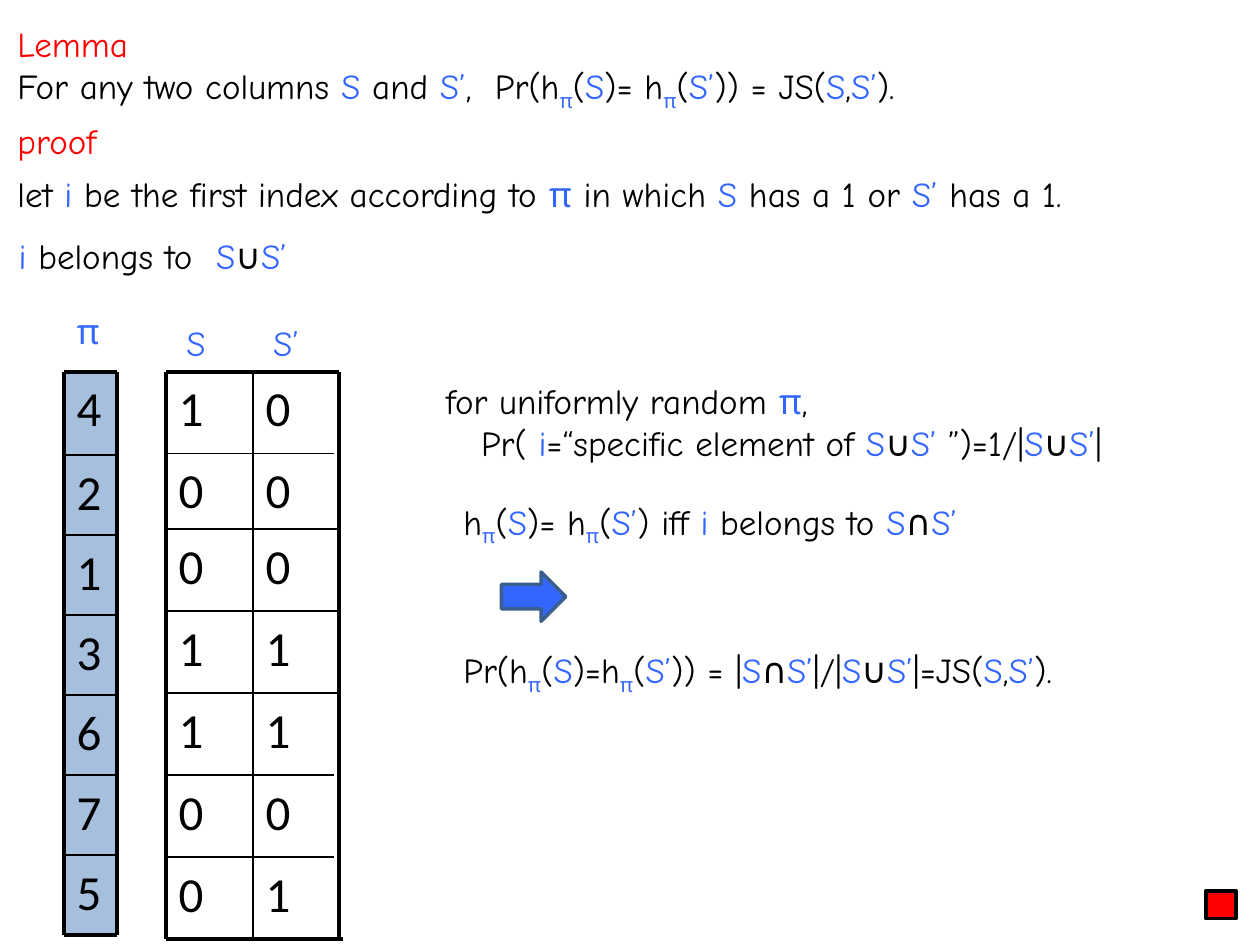
from dataclasses import dataclass

from lxml.etree import SubElement
from pptx import Presentation
from pptx.dml.color import RGBColor
from pptx.enum.shapes import MSO_CONNECTOR as LINE, MSO_SHAPE as SHAPE
from pptx.enum.text import MSO_ANCHOR as ANCHOR, MSO_AUTO_SIZE as FIT, PP_ALIGN as ALIGN
from pptx.oxml.ns import qn
from pptx.slide import Slide
from pptx.util import Inches, Pt

BLUE, RED, BLACK = "3366FF", "FF0000", "000000"


def color(value):
    return RGBColor.from_string(value)


@dataclass
class Painter:
    """Draws styled elements on the current page; *x* marks blue and *_x* a blue subscript."""

    page: Slide
    font: str = "Comic Neue"
    digit_font: str = "Calibri"
    size: int = 20
    digit_size: int = 28
    thin: float = 1
    thick: float = 2.25

    def span(self, para, text, tint, font, size):
        span = para.add_run()
        span.text = text.removeprefix("_")
        for name, value in {"name": font, "size": Pt(size)}.items():
            setattr(span.font, name, value)
        span.font.color.rgb = color(tint)
        if text.startswith("_"):
            span._r.get_or_add_rPr().set("baseline", "-25000")

    def fill_frame(self, frame, lines, tints, font, size):
        style = {"word_wrap": True, "vertical_anchor": ANCHOR.TOP}
        for name, value in style.items():
            setattr(frame, name, value)
        for index, (line, tint) in enumerate(zip(lines, tints)):
            para = frame.add_paragraph() if index else frame.paragraphs[0]
            para.alignment = ALIGN.LEFT
            for order, text in enumerate(line.split("*")):
                if text:
                    self.span(para, text, BLUE if order % 2 else tint, font, size)

    def text(self, left, top, width, height, lines, tints=(BLACK, BLACK)):
        box = self.page.shapes.add_textbox(*map(Inches, (left, top, width, height)))
        self.fill_frame(box.text_frame, lines, tints, self.font, self.size)
        box.text_frame.auto_size = FIT.SHAPE_TO_FIT_TEXT
        return box

    def shape(self, kind, left, top, width, height, fill, line=None, alpha=None):
        shape = self.page.shapes.add_shape(kind, *map(Inches, (left, top, width, height)))
        shape.shadow.inherit = False
        shape.fill.solid()
        shape.fill.fore_color.rgb = color(fill)
        if alpha:
            tint = shape._element.spPr.find(qn("a:solidFill"))[0]
            SubElement(tint, qn("a:alpha"), val=str(alpha * 1000))
        if line:
            shape.line.color.rgb = color(line)
            shape.line.width = Pt(2)
        else:
            shape.line.fill.background()
        return shape

    def cell(self, left, top, width, height, digit, fill=None):
        if fill:
            box = self.shape(SHAPE.RECTANGLE, left, top, width, height, fill, alpha=50)
        else:
            box = self.page.shapes.add_textbox(*map(Inches, (left, top, width, height)))
        self.fill_frame(box.text_frame, [digit], [BLACK], self.digit_font, self.digit_size)

    def line(self, x1, y1, x2, y2, width):
        line = self.page.shapes.add_connector(LINE.STRAIGHT, *map(Inches, (x1, y1, x2, y2)))
        line.line.color.rgb = color(BLACK)
        line.line.width = Pt(width)
        SubElement(line._element.spPr, qn("a:effectLst"))

    def grid(self, xs, ys, columns, fill=None, ends=None):
        for left, right, digits in zip(xs, xs[1:], columns):
            for top, bottom, digit in zip(ys, ys[1:], digits):
                self.cell(left, top, right - left, bottom - top, digit, fill)
        for row, y in enumerate(ys):
            end = (ends or {}).get(row, xs[-1])
            self.line(xs[0], y, end, y, self.thick if y in (ys[0], ys[-1]) else self.thin)
        for x in xs:
            self.line(x, ys[0], x, ys[-1], self.thick if x in (xs[0], xs[-1]) else self.thin)


def main():
    deck = Presentation()
    deck.slide_width, deck.slide_height = Inches(10), Inches(7.5)
    painter = Painter(deck.slides.add_slide(deck.slide_layouts[6]))

    painter.text(0.04, 0.13, 9.61, 0.77, [
        "Lemma",
        "For any two columns *S* and* S’*,  Pr(h*_π*(*S*)= h*_π*(*S’*)) = JS(*S*,*S’*).",
    ], (RED, BLACK))
    painter.text(0.04, 0.9, 9.93, 0.44, ["proof"], (RED,))
    painter.text(0.04, 1.32, 9.61, 0.44, [
        "let *i* be the first index according to *π* in which *S* has a 1 or *S’ *has a 1.",
    ])
    painter.text(0.05, 1.81, 2.97, 0.44, ["*i* belongs to  *S*∪*S’*"])
    claim = painter.text(3.44, 2.96, 6.38, 1.11, [
        "for uniformly random *π*,",
        "Pr( *i*=“specific element of *S*∪*S’ *”)=1/|*S*∪*S’*|",
    ])
    indent = claim.text_frame.paragraphs[1]._p.get_or_add_pPr()
    indent.set("marL", str(Inches(0.28)))
    painter.text(3.58, 3.92, 6.27, 0.44, ["h*_π*(*S*)= h*_π*(*S’*) iff *i* belongs to *S*∩*S’*"])
    painter.shape(SHAPE.RIGHT_ARROW, 3.98, 4.54, 0.51, 0.39, BLUE, "3A5F8C")
    painter.text(3.58, 5.1, 6.27, 0.44, [
        "Pr(h*_π*(*S*)=h*_π*(*S’*)) = |*S*∩*S’*|/|*S*∪*S’*|=JS(*S*,*S’*).",
    ])
    painter.shape(SHAPE.RECTANGLE, 9.57, 7.07, 0.24, 0.22, RED, BLACK)

    set_rows = [2.95, 3.6] + [4.2 + 0.65 * row for row in range(6)]
    order_rows = [2.95] + [3.61 + 3.81 * row / 6 for row in range(7)]
    painter.grid([1.32, 2.01, 2.69], set_rows, ["1001100", "0001101"],
                 ends={1: 2.65, 5: 2.65, 6: 2.65, 7: 2.72})
    painter.grid([0.51, 0.93], order_rows, ["4213675"], fill="4F81BD")

    for left, top, width, label in [
        (0.51, 2.41, 0.42, "π"), (1.38, 2.5, 0.59, "S"), (2.07, 2.5, 0.59, "S’"),
    ]:
        painter.text(left, top, width, 0.44, [f"*{label}*"])

    deck.save("out.pptx")


if __name__ == "__main__":
    main()
